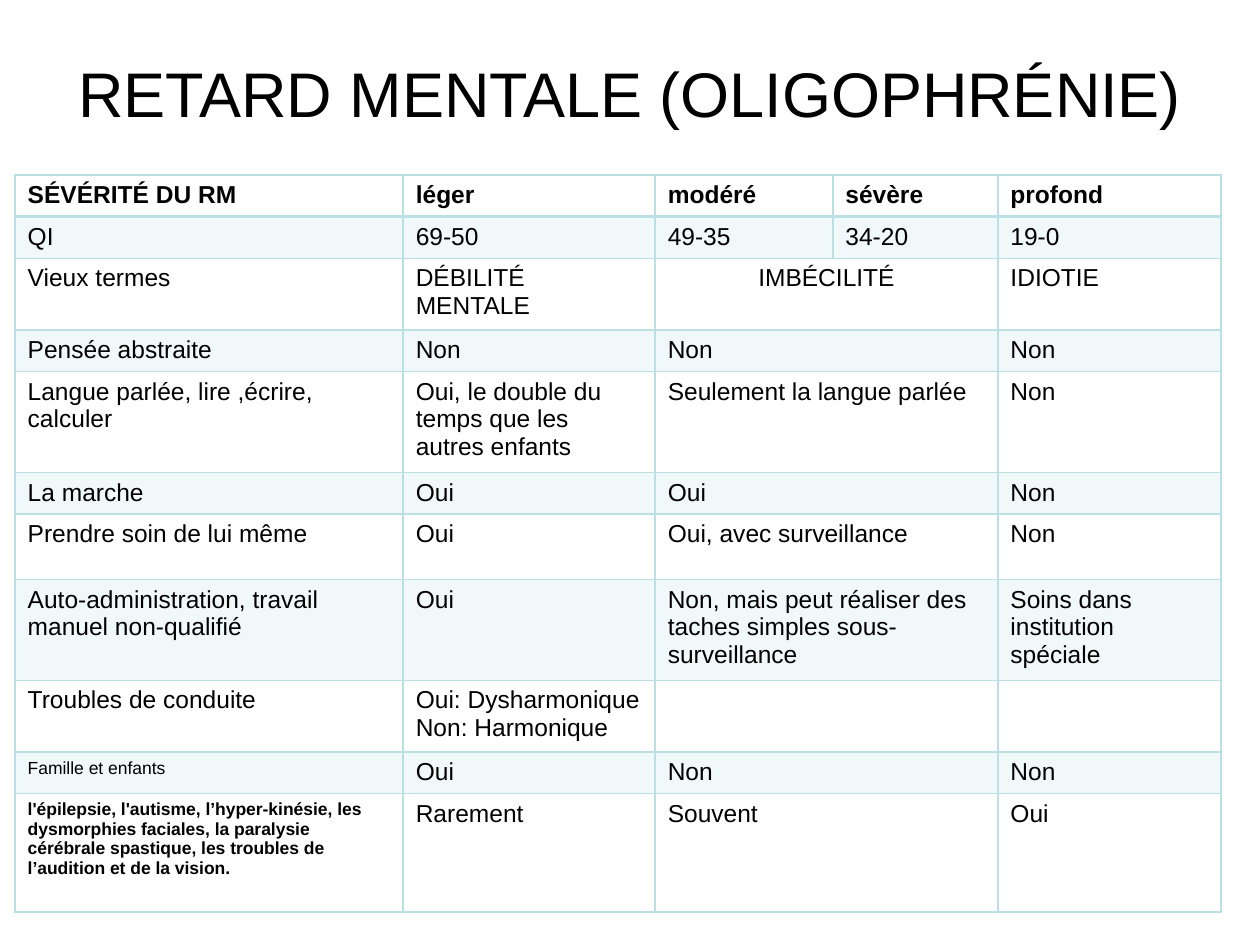
"""Build a slide with a table of the degrees of mental retardation."""
from lxml.etree import SubElement
from pptx import Presentation
from pptx.dml.color import RGBColor
from pptx.enum.text import MSO_ANCHOR, PP_ALIGN
from pptx.oxml import parse_xml
from pptx.oxml.ns import nsdecls, qn
from pptx.util import Inches, Pt

COLORS = {"text": "000000", "teal": "BBE0E3"}
COLS = [3.08, 2, 1.41, 1.31, 1.77]
HEIGHTS = [0.33, 0.33, 0.57, 0.33, 0.8, 0.33, 0.52, 0.8, 0.57, 0.33, 0.94]
ROWS = [
    ["SÉVÉRITÉ DU RM", "léger", "modéré", "sévère", "profond"],
    ["QI", "69-50", "49-35", "34-20", "19-0"],
    ["Vieux termes", "DÉBILITÉ MENTALE", "IMBÉCILITÉ", None, "IDIOTIE"],
    ["Pensée abstraite", "Non", "Non", None, "Non"],
    ["Langue parlée, lire ,écrire, calculer",
     "Oui, le double du temps que les autres enfants",
     "Seulement la langue parlée", None, "Non"],
    ["La marche", "Oui", "Oui", None, "Non"],
    ["Prendre soin de lui même", "Oui", "Oui, avec surveillance", None, "Non"],
    ["Auto-administration, travail manuel non-qualifié", "Oui",
     "Non, mais peut réaliser des taches simples sous-surveillance", None,
     "Soins dans institution spéciale"],
    ["Troubles de conduite", "Oui: Dysharmonique\nNon: Harmonique", "", None, ""],
    ["Famille et enfants", "Oui", "Non", None, "Non"],
    ["l'épilepsie, l'autisme, l’hyper-kinésie, les dysmorphies faciales, "
     "la paralysie cérébrale spastique, les troubles de l’audition et de la vision.",
     "Rarement", "Souvent", None, "Oui"],
]
LAST = len(ROWS) - 1


def add_run(p, text, size, bold=False):
    r = p.add_run()
    r.text = text
    r.font.name = "Arial"
    r.font.size = Pt(size)
    r.font.bold = bold
    r.font.color.rgb = RGBColor.from_string(COLORS["text"])


def set_borders(cell, top, bottom):
    widths = {"lnL": 1, "lnR": 1, "lnT": top, "lnB": bottom}
    for i, (tag, width) in enumerate(widths.items()):
        cell._tc.get_or_add_tcPr().insert(i, parse_xml(
            f'<a:{tag} {nsdecls("a")} w="{Pt(width)}"><a:solidFill>'
            f'<a:srgbClr val="{COLORS["teal"]}"/></a:solidFill></a:{tag}>'))


prs = Presentation()
prs.slide_width, prs.slide_height = Inches(10), Inches(7.5)
s = prs.slides.add_slide(prs.slide_layouts[5])

title = s.shapes.title
title.left, title.top = Inches(0.5), Inches(0.3)
title.width, title.height = Inches(9), Inches(0.87)
tf = title.text_frame
tf.word_wrap = True
tf.vertical_anchor = MSO_ANCHOR.MIDDLE
tf.paragraphs[0].alignment = PP_ALIGN.CENTER
add_run(tf.paragraphs[0], "RETARD MENTALE (OLIGOPHRÉNIE)", 36)

table = s.shapes.add_table(len(ROWS), len(COLS), Inches(0.12), Inches(1.39),
                           Inches(sum(COLS)), Inches(sum(HEIGHTS))).table
table.first_row = table.horz_banding = False
for col, width in zip(table.columns, COLS):
    col.width = Inches(width)

for i, (row, height) in enumerate(zip(ROWS, HEIGHTS)):
    table.rows[i].height = Inches(height)
    for j, text in enumerate(row):
        cell = table.cell(i, j)
        if i % 2:
            cell.fill.solid()
            cell.fill.fore_color.rgb = RGBColor.from_string(COLORS["teal"])
            color = cell._tc.tcPr.find(".//" + qn("a:srgbClr"))
            SubElement(color, qn("a:alpha")).set("val", "20000")
        else:
            cell.fill.background()
        set_borders(cell, top=2 if i == 1 else 1, bottom=2 if i == 0 else 1)
        if text is None:
            table.cell(i, j - 1).merge(cell)
        elif text:
            size = 10 if j == 0 and i >= LAST - 1 else 14
            bold = i == 0 or (i == LAST and j == 0)
            for k, line in enumerate(text.split("\n")):
                tf = cell.text_frame
                p = tf.add_paragraph() if k else tf.paragraphs[0]
                add_run(p, line, size, bold)

table.cell(2, 2).text_frame.paragraphs[0].alignment = PP_ALIGN.CENTER
prs.save("out.pptx")
